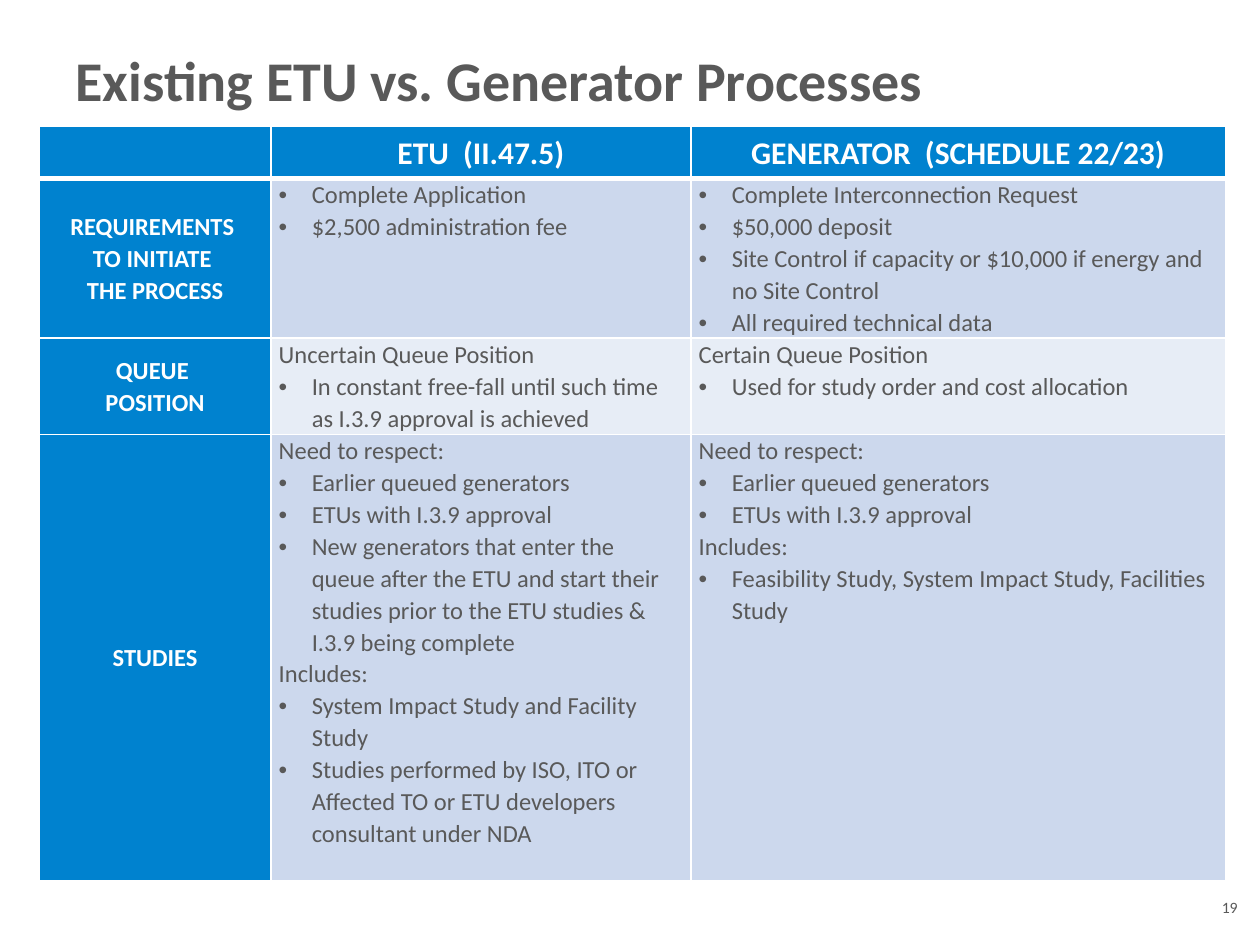
from dataclasses import dataclass

import lxml.etree
import pptx
import pptx.dml.color
import pptx.enum.text
import pptx.oxml
import pptx.oxml.ns
import pptx.util

Pt = pptx.util.Pt
PP_ALIGN = pptx.enum.text.PP_ALIGN
MSO_ANCHOR = pptx.enum.text.MSO_ANCHOR


@dataclass(frozen=True)
class Theme:
    font: str = "Calibri"
    grey: str = "595959"
    white: str = "FFFFFF"
    blue: str = "0082CF"
    dark_band: str = "CCD8ED"
    light_band: str = "E7EDF6"
    title_size: float = 32
    header_size: float = 18
    cell_size: float = 14
    number_size: float = 9
    line_spacing: float = 1.07
    bullet_indent: float = 18.9
    cell_margin: float = 4.5


@dataclass(frozen=True)
class Line:
    text: str
    bulleted: bool = False


@dataclass(frozen=True)
class Topic:
    label: tuple[str, ...]
    etu: tuple[Line, ...]
    generator: tuple[Line, ...]
    height: float


THEME = Theme()
COLUMN_WIDTHS = (132.3, 240, 305.5)
HEADER_HEIGHT = 30
HEADERS = ("", "ETU  (II.47.5)", "GENERATOR  (SCHEDULE 22/23)")


def bullets(*texts: str) -> tuple[Line, ...]:
    return tuple(Line(text, True) for text in texts)


def section(heading: str, *texts: str) -> tuple[Line, ...]:
    return (Line(heading), *bullets(*texts))


TOPICS = (
    Topic(
        ("REQUIREMENTS ", "TO INITIATE ", "THE PROCESS"),
        bullets("Complete Application", "$2,500 administration fee"),
        bullets(
            "Complete Interconnection Request",
            "$50,000 deposit",
            "Site Control if capacity or $10,000 if energy and no Site Control",
            "All required technical data",
        ),
        91,
    ),
    Topic(
        ("QUEUE ", "POSITION"),
        section(
            "Uncertain Queue Position",
            "In constant free-fall until such time as I.3.9 approval is achieved",
        ),
        section("Certain Queue Position", "Used for study order and cost allocation"),
        55,
    ),
    Topic(
        ("STUDIES",),
        section(
            "Need to respect:",
            "Earlier queued generators",
            "ETUs with I.3.9 approval",
            "New generators that enter the queue after the ETU and start their "
            "studies prior to the ETU studies & I.3.9 being complete",
        )
        + section(
            "Includes:",
            "System Impact Study and Facility Study",
            "Studies performed by ISO, ITO or Affected TO or ETU developers "
            "consultant under NDA",
        ),
        section(
            "Need to respect:", "Earlier queued generators", "ETUs with I.3.9 approval"
        )
        + section("Includes:", "Feasibility Study, System Impact Study, Facilities Study"),
        255,
    ),
)


def rgb(value: str) -> pptx.dml.color.RGBColor:
    return pptx.dml.color.RGBColor.from_string(value)


def style_runs(paragraph, size: float, color: str, bold: bool = False) -> None:
    for run in paragraph.runs:
        run.font.name = THEME.font
        run.font.size = Pt(size)
        run.font.bold = bold
        run.font.color.rgb = rgb(color)


def add_bullet(paragraph) -> None:
    properties = paragraph._p.get_or_add_pPr()
    indent = Pt(THEME.bullet_indent)
    properties.set("marL", str(indent))
    properties.set("indent", str(-indent))
    qn = pptx.oxml.ns.qn
    lxml.etree.SubElement(properties, qn("a:buFont"), typeface="Arial")
    lxml.etree.SubElement(properties, qn("a:buChar"), char="•")


def add_borders(cell, bottom: float) -> None:
    properties = cell._tc.get_or_add_tcPr()
    for side, width in (("L", 1), ("R", 1), ("T", 1), ("B", bottom)):
        properties.append(
            pptx.oxml.parse_xml(
                f'<a:ln{side} {pptx.oxml.ns.nsdecls("a")} w="{Pt(width)}">'
                f'<a:solidFill><a:srgbClr val="{THEME.white}"/></a:solidFill>'
                f"</a:ln{side}>"
            )
        )


def fill_cell(
    cell,
    lines: tuple[Line, ...],
    background: str,
    size: float = THEME.cell_size,
    heading: bool = False,
    bottom: float = 1,
) -> None:
    add_borders(cell, bottom)
    cell.fill.solid()
    cell.fill.fore_color.rgb = rgb(background)
    cell.margin_left = cell.margin_right = Pt(THEME.cell_margin)
    cell.margin_top = cell.margin_bottom = Pt(0)
    cell.vertical_anchor = MSO_ANCHOR.MIDDLE if heading else MSO_ANCHOR.TOP
    cell.text_frame.text = "\n".join(line.text for line in lines)
    for line, paragraph in zip(lines, cell.text_frame.paragraphs):
        paragraph.alignment = PP_ALIGN.CENTER if heading else PP_ALIGN.LEFT
        paragraph.line_spacing = THEME.line_spacing
        if line.bulleted:
            add_bullet(paragraph)
        style_runs(paragraph, size, THEME.white if heading else THEME.grey, heading)


def add_title(slide) -> None:
    title = slide.shapes.title
    title.left, title.top, title.width, title.height = Pt(36), Pt(0), Pt(648), Pt(90)
    title.text_frame.text = "Existing ETU vs. Generator Processes"
    title.text_frame.vertical_anchor = MSO_ANCHOR.MIDDLE
    heading = title.text_frame.paragraphs[0]
    heading.alignment = PP_ALIGN.LEFT
    style_runs(heading, THEME.title_size, THEME.grey, True)


def add_comparison(slide) -> None:
    heights = (HEADER_HEIGHT, *(topic.height for topic in TOPICS))
    comparison = slide.shapes.add_table(
        len(heights), len(COLUMN_WIDTHS),
        Pt(22.5), Pt(72), Pt(sum(COLUMN_WIDTHS)), Pt(sum(heights)),
    ).table
    for column, width in zip(comparison.columns, COLUMN_WIDTHS):
        column.width = Pt(width)
    for row, height in zip(comparison.rows, heights):
        row.height = Pt(height)
    for column, header in enumerate(HEADERS):
        fill_cell(comparison.cell(0, column), (Line(header),), THEME.blue,
                  THEME.header_size, heading=True, bottom=3)
    for row, topic in enumerate(TOPICS, start=1):
        band = THEME.dark_band if row % 2 else THEME.light_band
        label = tuple(Line(text) for text in topic.label)
        fill_cell(comparison.cell(row, 0), label, THEME.blue, heading=True)
        fill_cell(comparison.cell(row, 1), topic.etu, band)
        fill_cell(comparison.cell(row, 2), topic.generator, band)


def add_page_number(slide) -> None:
    frame = slide.shapes.add_textbox(Pt(690.5), Pt(507.6), Pt(24.5), Pt(21)).text_frame
    frame.word_wrap = True
    frame.margin_left = frame.margin_right = Pt(0)
    frame.margin_top = frame.margin_bottom = Pt(0)
    frame.vertical_anchor = MSO_ANCHOR.MIDDLE
    frame.text = "19"
    frame.paragraphs[0].alignment = PP_ALIGN.CENTER
    style_runs(frame.paragraphs[0], THEME.number_size, THEME.grey)


def main() -> None:
    deck = pptx.Presentation()
    deck.slide_width, deck.slide_height = Pt(720), Pt(540)
    slide = deck.slides.add_slide(deck.slide_layouts.get_by_name("Title Only"))
    add_title(slide)
    add_comparison(slide)
    add_page_number(slide)
    deck.save("out.pptx")


if __name__ == "__main__":
    main()
